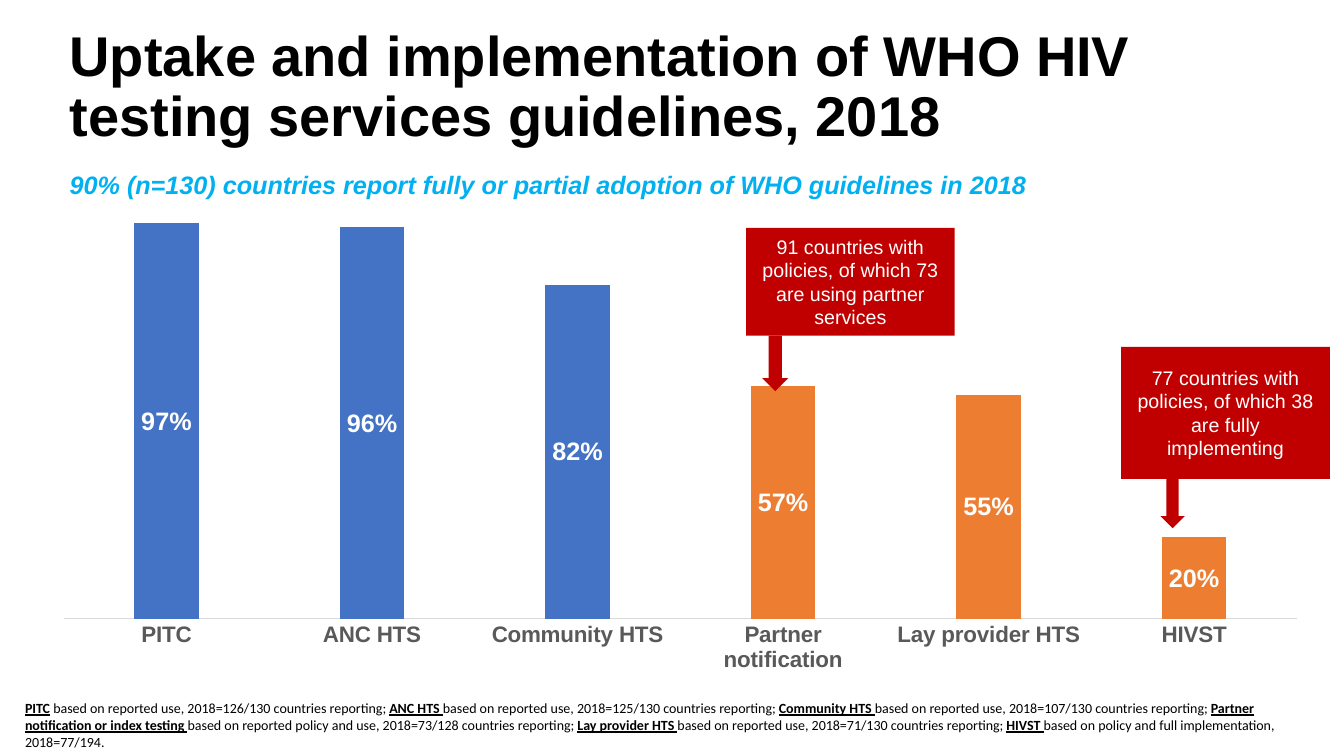
from dataclasses import dataclass

from lxml import etree
from pptx import Presentation
from pptx.chart.data import CategoryChartData
from pptx.dml.color import RGBColor
from pptx.enum.chart import XL_CHART_TYPE, XL_LABEL_POSITION, XL_TICK_LABEL_POSITION, XL_TICK_MARK
from pptx.enum.shapes import MSO_SHAPE
from pptx.enum.text import MSO_ANCHOR, PP_ALIGN
from pptx.oxml.ns import qn
from pptx.util import Inches, Pt

COLUMN = XL_CHART_TYPE.COLUMN_CLUSTERED
CENTER_LABEL = XL_LABEL_POSITION.CENTER
NO_LABEL = XL_TICK_LABEL_POSITION.NONE
NO_TICK = XL_TICK_MARK.NONE
RECT, ARROW = MSO_SHAPE.RECTANGLE, MSO_SHAPE.DOWN_ARROW
MIDDLE, TOP = MSO_ANCHOR.MIDDLE, MSO_ANCHOR.TOP
LEFT, CENTER = PP_ALIGN.LEFT, PP_ALIGN.CENTER

COLORS = {
    "black": "000000", "white": "FFFFFF", "sky": "00B0F0", "gray": "595959",
    "rule": "D9D9D9", "blue": "4472C4", "orange": "ED7D31", "red": "C00000",
}


@dataclass
class Box:
    left: float
    top: float
    width: float
    height: float

    def lengths(self) -> list:
        return [Inches(v) for v in (self.left, self.top, self.width, self.height)]


@dataclass
class Bar:
    name: str
    share: float
    color: str


@dataclass
class Callout:
    text: str
    panel: Box
    arrow: Box


@dataclass
class Note:
    term: str
    basis: str


BARS = [
    Bar("PITC", 0.97, "blue"),
    Bar("ANC HTS", 0.96, "blue"),
    Bar("Community HTS", 0.82, "blue"),
    Bar("Partner notification", 0.57, "orange"),
    Bar("Lay provider HTS", 0.55, "orange"),
    Bar("HIVST", 0.2, "orange"),
]
CALLOUTS = [
    Callout("77 countries with policies, of which 38 are fully implementing",
            Box(11.12, 3.44, 2.07, 1.31), Box(11.51, 4.69, 0.24, 0.55)),
    Callout("91 countries with policies, of which 73 are using partner services",
            Box(7.4, 2.26, 2.07, 1.07), Box(7.56, 3.33, 0.26, 0.55)),
]
NOTES = [
    Note("PITC", " based on reported use, 2018=126/130 countries reporting; "),
    Note("ANC HTS ", "based on reported use, 2018=125/130 countries reporting; "),
    Note("Community HTS ", "based on reported use, 2018=107/130 countries reporting; "),
    Note("Partner notification or index testing ",
         "based on reported policy and use, 2018=73/128 countries reporting; "),
    Note("Lay provider HTS ", "based on reported use, 2018=71/130 countries reporting; "),
    Note("HIVST ", "based on policy and full implementation, 2018=77/194."),
]


def color(name: str) -> RGBColor:
    return RGBColor.from_string(COLORS[name])


def style(font, size: float, shade: str, bold: bool = False, face: str = "Arial") -> None:
    font.name, font.size, font.bold = face, Pt(size), bold
    font.color.rgb = color(shade)


def add_title(slide) -> None:
    title = slide.shapes.title
    title.left, title.top, title.width, title.height = Box(0.59, 0.26, 12.37, 1.74).lengths()
    frame = title.text_frame
    frame.word_wrap = True
    frame.vertical_anchor = MIDDLE
    head, sub = frame.paragraphs[0], frame.add_paragraph()
    head.text = "Uptake and implementation of WHO HIV testing services guidelines, 2018"
    sub.text = "90% (n=130) countries report fully or partial adoption of WHO guidelines in 2018"
    for line in (head, sub):
        line.alignment = LEFT
        line.line_spacing = 0.9
    head.space_before = Pt(0)
    sub.space_before = Pt(17)
    style(head.runs[0].font, 40, "black", True)
    style(sub.runs[0].font, 18, "sky", True)
    sub.runs[0].font.italic = True


def set_plot(chart, frame: Box) -> None:
    plot = chart.element.find(".//" + qn("c:plotArea"))
    for old in plot.findall(qn("c:layout")):
        plot.remove(old)
    layout = etree.Element(qn("c:layout"))
    manual = etree.SubElement(layout, qn("c:manualLayout"))
    parts = {"layoutTarget": "inner", "xMode": "edge", "yMode": "edge",
             "x": frame.left, "y": frame.top, "w": frame.width, "h": frame.height}
    for tag, value in parts.items():
        etree.SubElement(manual, qn("c:" + tag)).set("val", str(value))
    plot.insert(0, layout)


def add_bars(slide) -> None:
    data = CategoryChartData(number_format="0%")
    data.categories = [bar.name for bar in BARS]
    data.add_series("Series 1", [bar.share for bar in BARS])
    chart = slide.shapes.add_chart(COLUMN, *Box(0.38, 2, 12.61, 4.76).lengths(), data).chart
    chart.has_legend = chart.has_title = False
    style(chart.font, 18, "black")
    set_plot(chart, Box(0.02, 0.02, 0.97, 0.85))

    names = chart.category_axis
    names.major_tick_mark = names.minor_tick_mark = NO_TICK
    names.format.line.color.rgb = color("rule")
    names.format.line.width = Pt(0.75)
    style(names.tick_labels.font, 16, "gray", True)

    scale = chart.value_axis
    scale.minimum_scale, scale.maximum_scale, scale.major_unit = 0, 1, 0.2
    scale.has_major_gridlines = False
    scale.tick_label_position = NO_LABEL
    scale.visible = False

    plot = chart.plots[0]
    plot.gap_width, plot.overlap, plot.vary_by_categories = 219, -27, False
    series = plot.series[0]
    series.format.fill.solid()
    series.format.fill.fore_color.rgb = color("blue")
    for i, bar in enumerate(BARS):
        if bar.color != "blue":
            fill = series.points[i].format.fill
            fill.solid()
            fill.fore_color.rgb = color(bar.color)
    labels = series.data_labels
    labels.show_value = True
    labels.position = CENTER_LABEL
    labels.number_format, labels.number_format_is_linked = "0%", False
    style(labels.font, 18, "white", True)


def add_notes(slide) -> None:
    frame = slide.shapes.add_textbox(*Box(0.15, 6.89, 13.03, 0.61).lengths()).text_frame
    frame.word_wrap = True
    frame.vertical_anchor = TOP
    line = frame.paragraphs[0]
    for note in NOTES:
        for text, strong in ((note.term, True), (note.basis, False)):
            run = line.add_run()
            run.text = text
            style(run.font, 10, "black", strong, "Calibri")
            run.font.underline = strong


def add_block(slide, kind, box: Box):
    shape = slide.shapes.add_shape(kind, *box.lengths())
    shape.shadow.inherit = False
    shape.fill.solid()
    shape.fill.fore_color.rgb = color("red")
    shape.line.fill.background()
    return shape


def add_callout(slide, item: Callout) -> None:
    add_block(slide, ARROW, item.arrow)
    frame = add_block(slide, RECT, item.panel).text_frame
    frame.word_wrap = True
    frame.vertical_anchor = MIDDLE
    frame.text = item.text
    line = frame.paragraphs[0]
    line.alignment = CENTER
    style(line.runs[0].font, 14, "white")


def main() -> None:
    deck = Presentation()
    deck.slide_width, deck.slide_height = Inches(13.33), Inches(7.5)
    slide = deck.slides.add_slide(deck.slide_layouts[5])
    add_title(slide)
    add_bars(slide)
    add_notes(slide)
    for item in CALLOUTS:
        add_callout(slide, item)
    deck.save("out.pptx")


if __name__ == "__main__":
    main()
